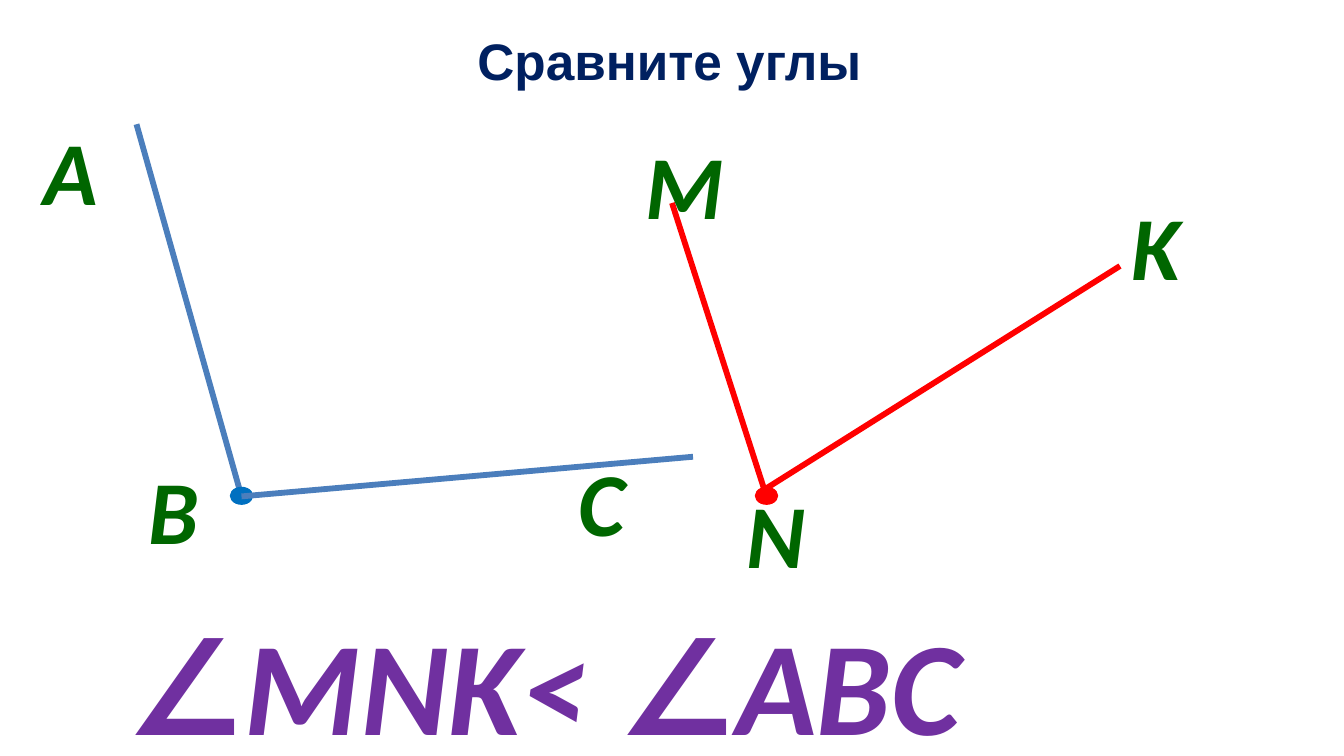
from lxml import etree
from pptx import Presentation
from pptx import util as u
from pptx.dml.color import RGBColor
from pptx.enum import shapes, text
from pptx.oxml import ns

TITLE = "Сравните углы"
TITLE_BOX = (400.5, 21.5, 347, 60.5)
FORMULA = " ∠MNK< ∠ABC"
FORMULA_BOX = (72, 511, 1017, 148.5)

DOT_WIDTH, DOT_HEIGHT = 18, 13.5
LABEL_HEIGHT = 103.5

# Sides run from their outer end to the vertex; labels are (letter, left, top, width).
ANGLES = [
    {
        "side_color": "4B7EBC", "dot_color": "0070C0", "dot_center": (207, 425),
        "sides": [((117, 106.5), (207, 425.5)), ((594, 391.5), (207, 425.5))],
        "labels": [("A", 27, 94.5, 198), ("B", 117, 384.5, 198), ("С", 486, 378, 90)],
    },
    {
        "side_color": "FF0000", "dot_color": "FF0000", "dot_center": (657, 425),
        "sides": [((576, 174), (657, 425.5)), ((960, 228), (657, 418.5))],
        "labels": [("M", 543.5, 106.5, 198), ("N", 630, 405, 198), ("K", 960, 158.5, 198)],
    },
]


def points(values):
    return [u.Pt(value) for value in values]


def rgb(color):
    return RGBColor.from_string(color)


def write(box, words, size, color, font="Calibri", italic=True, align=None, wrap=True):
    frame = box.text_frame
    frame.word_wrap = wrap
    frame.auto_size = text.MSO_AUTO_SIZE.NONE
    frame.vertical_anchor = text.MSO_ANCHOR.TOP
    para = frame.paragraphs[0]
    para.alignment = align
    span = para.add_run()
    span.text = words
    span.font.name = font
    span.font.size = u.Pt(size)
    span.font.bold = True
    span.font.italic = italic
    span.font.color.rgb = rgb(color)


def add_text(slide, place, words, size, color):
    box = slide.shapes.add_textbox(*points(place))
    frame = box.text_frame
    frame.margin_left = frame.margin_right = u.Pt(10)
    frame.margin_top = frame.margin_bottom = u.Pt(5)
    write(box, words, size, color)


def add_side(slide, start, end, color):
    side = slide.shapes.add_connector(
        shapes.MSO_CONNECTOR.STRAIGHT, *points(start + end))
    side.line.color.rgb = rgb(color)
    side.line.width = u.Pt(5)
    etree.SubElement(side._element.spPr, ns.qn("a:effectLst"))


def add_dot(slide, center, color):
    x, y = center
    place = (x - DOT_WIDTH / 2, y - DOT_HEIGHT / 2, DOT_WIDTH, DOT_HEIGHT)
    dot = slide.shapes.add_shape(shapes.MSO_SHAPE.OVAL, *points(place))
    dot.shadow.inherit = False
    dot.fill.solid()
    dot.fill.fore_color.rgb = rgb(color)
    dot.line.color.rgb = rgb(color)
    dot.line.width = u.Pt(2)


def add_angle(slide, angle):
    first, second = angle["sides"]
    add_side(slide, *first, angle["side_color"])
    add_dot(slide, angle["dot_center"], angle["dot_color"])
    add_side(slide, *second, angle["side_color"])
    for letter, left, top, width in angle["labels"]:
        add_text(slide, (left, top, width, LABEL_HEIGHT), letter, 77, "006600")


def main():
    deck = Presentation()
    deck.slide_width, deck.slide_height = points((1152, 648))
    slide = deck.slides.add_slide(deck.slide_layouts.get_by_name("Title Only"))

    title = slide.shapes.title
    title.left, title.top, title.width, title.height = points(TITLE_BOX)
    write(title, TITLE, 44, "002060", font="Arial", italic=False,
          align=text.PP_ALIGN.CENTER, wrap=False)

    for angle in ANGLES:
        add_angle(slide, angle)
    add_text(slide, FORMULA_BOX, FORMULA, 114, "7030A0")
    deck.save("out.pptx")


if __name__ == "__main__":
    main()
